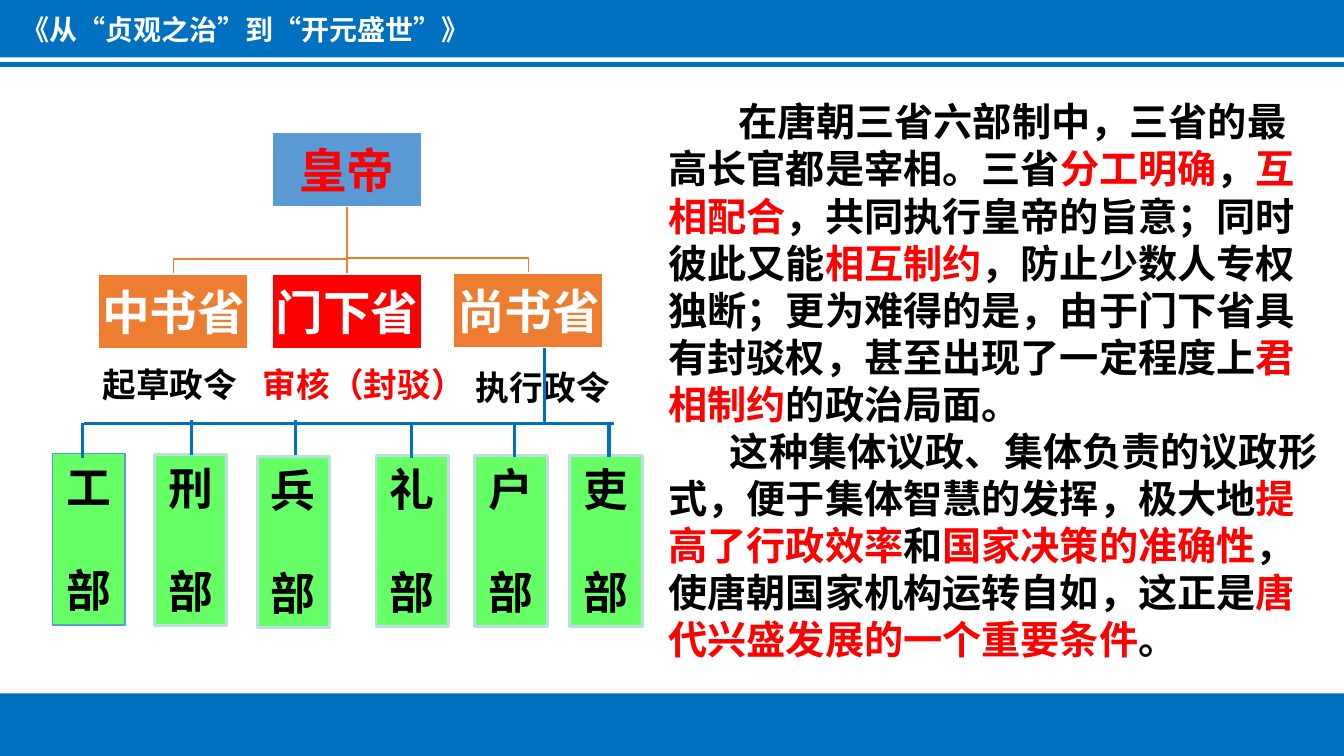
from dataclasses import dataclass

from lxml.etree import SubElement
from pptx import Presentation
from pptx.dml.color import RGBColor
from pptx.enum.shapes import MSO_CONNECTOR, MSO_SHAPE
from pptx.enum.text import MSO_ANCHOR, MSO_AUTO_SIZE, PP_ALIGN
from pptx.oxml.ns import qn
from pptx.util import Inches, Pt

BLUE = RGBColor(0x00, 0x70, 0xC0)
SKY = RGBColor(0x5B, 0x9B, 0xD5)
PALE = RGBColor(0xBB, 0xE0, 0xE3)
ORANGE = RGBColor(0xED, 0x7D, 0x31)
GREEN = RGBColor(0x66, 0xFF, 0x66)
RED = RGBColor(0xFF, 0x00, 0x00)
BLACK = RGBColor(0x00, 0x00, 0x00)
WHITE = RGBColor(0xFF, 0xFF, 0xFF)
CJK_FONT = "Noto Sans CJK SC"


@dataclass
class Office:
    name: str
    left: float
    top: float
    fill: RGBColor
    color: RGBColor = WHITE


@dataclass
class Duty:
    text: str
    left: float
    top: float
    width: float
    color: RGBColor = BLACK


@dataclass
class Ministry:
    name: str
    left: float
    top: float
    stub_x: float
    stub_top: float
    border: RGBColor = PALE
    border_pt: float = 2


OFFICES = [
    Office("皇帝", 2.7, 1.31, SKY, RED),
    Office("中书省", 0.98, 2.72, ORANGE),
    Office("门下省", 2.7, 2.72, RED),
    Office("尚书省", 4.5, 2.71, ORANGE),
]
DUTIES = [
    Duty("起草政令", 0.92, 3.56, 1.54),
    Duty("审核（封驳）", 2.51, 3.56, 2.22, RED),
    Duty("执行政令", 4.62, 3.59, 1.54),
]
MINISTRIES = [
    Ministry("工", 0.52, 4.5, 0.82, 4.2, SKY, 1),
    Ministry("刑", 1.53, 4.51, 1.9, 4.17),
    Ministry("兵", 2.55, 4.53, 2.93, 4.17),
    Ministry("礼", 3.73, 4.52, 4.08, 4.2),
    Ministry("户", 4.71, 4.52, 5.1, 4.19),
    Ministry("吏", 5.65, 4.52, 6.04, 4.19),
]
BRANCHES = [
    [(3.44, 2.05), (3.44, 2.57), (1.72, 2.57), (1.72, 2.72)],
    [(3.44, 2.05), (3.44, 2.56), (5.24, 2.56), (5.24, 2.71)],
    [(3.44, 2.05), (3.44, 2.72)],
]
# Each paragraph: first-line indent and runs, alternating black and red
PARAGRAPHS = [
    (0.69, ["在唐朝三省六部制中，三省的最高长官都是宰相。三省", "分工明确", "，",
            "互相配合", "，共同执行皇帝的旨意；同时彼此又能", "相互制约",
            "，防止少数人专权独断；更为难得的是，由于门下省具有封驳权，甚至出现了一定程度上",
            "君相制约", "的政治局面。"]),
    (0.61, ["这种集体议政、集体负责的议政形式，便于集体智慧的发挥，极大地",
            "提高了行政效率", "和", "国家决策的准确性",
            "，使唐朝国家机构运转自如，这正是", "唐代兴盛发展的一个重要条件", "。"]),
]


def set_attrs(obj, **values) -> None:
    for key, value in values.items():
        setattr(obj, key, value)


def place(sp, left: float, top: float, width: float, height: float) -> None:
    set_attrs(sp, left=Inches(left), top=Inches(top),
              width=Inches(width), height=Inches(height))


def set_frame(tf, wrap: bool, anchor: MSO_ANCHOR, inset: float | None = None) -> None:
    set_attrs(tf, word_wrap=wrap, vertical_anchor=anchor, auto_size=MSO_AUTO_SIZE.NONE)
    if inset is not None:
        sides = ("left", "right", "top", "bottom")
        set_attrs(tf, **{f"margin_{side}": Inches(inset) for side in sides})


def add_run(p, text: str, size: float, color: RGBColor, font: str = "Calibri") -> None:
    r = p.add_run()
    r.text = text
    set_attrs(r.font, name=font, size=Pt(size), bold=True)
    r.font.color.rgb = color
    SubElement(r.font._element, qn("a:ea"), typeface=CJK_FONT)


def add_box(s, at: tuple, fill: RGBColor, border: RGBColor | None = None,
            border_pt: float = 1):
    sp = s.shapes.add_shape(MSO_SHAPE.RECTANGLE, *map(Inches, at))
    sp.shadow.inherit = False
    sp.fill.solid()
    sp.fill.fore_color.rgb = fill
    if border is None:
        sp.line.fill.background()
    else:
        sp.line.color.rgb = border
        sp.line.width = Pt(border_pt)
    return sp


def add_line(s, x1: float, y1: float, x2: float, y2: float) -> None:
    ends = map(Inches, (x1, y1, x2, y2))
    line = s.shapes.add_connector(MSO_CONNECTOR.STRAIGHT, *ends)
    line.line.color.rgb = BLUE
    line.line.width = Pt(2.25)
    SubElement(line._element.spPr, qn("a:effectLst"))


def add_branch(s, points: list) -> None:
    start, *rest = [(Inches(x), Inches(y)) for x, y in points]
    builder = s.shapes.build_freeform(*start)
    builder.add_line_segments(rest, close=False)
    sp = builder.convert_to_shape()
    sp.shadow.inherit = False
    sp.fill.background()
    sp.line.color.rgb = ORANGE
    sp.line.width = Pt(1)


def add_office(s, office: Office) -> None:
    sp = add_box(s, (office.left, office.top, 1.48, 0.74), office.fill, WHITE)
    set_frame(sp.text_frame, True, MSO_ANCHOR.MIDDLE, 0.03)
    p = sp.text_frame.paragraphs[0]
    p.alignment = PP_ALIGN.CENTER
    add_run(p, office.name, 34, office.color)


def add_duty(s, duty: Duty) -> None:
    at = (duty.left, duty.top, duty.width, 0.5)
    tf = s.shapes.add_textbox(*map(Inches, at)).text_frame
    set_frame(tf, False, MSO_ANCHOR.MIDDLE)
    add_run(tf.paragraphs[0], duty.text, 24, duty.color)


def add_ministry(s, ministry: Ministry) -> None:
    sp = add_box(s, (ministry.left, ministry.top, 0.72, 1.7), GREEN,
                 ministry.border, ministry.border_pt)
    tf = sp.text_frame
    set_frame(tf, True, MSO_ANCHOR.MIDDLE)
    for p, text, gap in ((tf.paragraphs[0], ministry.name, 0),
                         (tf.add_paragraph(), "部", 36.8)):
        set_attrs(p, alignment=PP_ALIGN.CENTER, line_spacing=Pt(36.8),
                  space_before=Pt(gap))
        add_run(p, text, 32, BLACK)


def fill_title(title) -> None:
    place(title, 0.11, 0.07, 5.07, 0.44)
    set_frame(title.text_frame, True, MSO_ANCHOR.MIDDLE)
    p = title.text_frame.paragraphs[0]
    p.alignment = PP_ALIGN.LEFT
    add_run(p, "《从“贞观之治”到“开元盛世”》", 20, WHITE, CJK_FONT)


def fill_body(body) -> None:
    place(body, 6.53, 0.92, 6.65, 6.06)
    tf = body.text_frame
    set_frame(tf, True, MSO_ANCHOR.TOP)
    for i, (indent, texts) in enumerate(PARAGRAPHS):
        p = tf.add_paragraph() if i else tf.paragraphs[0]
        set_attrs(p, alignment=PP_ALIGN.LEFT, line_spacing=Pt(33.6), space_before=Pt(0))
        pPr = p._p.get_or_add_pPr()
        pPr.set("marL", "0")
        pPr.set("indent", str(Inches(indent)))
        SubElement(pPr, qn("a:buNone"))
        for j, text in enumerate(texts):
            add_run(p, text, 28, RED if j % 2 else BLACK, CJK_FONT)


def main() -> None:
    prs = Presentation()
    set_attrs(prs, slide_width=Inches(13.33), slide_height=Inches(7.5))
    s = prs.slides.add_slide(prs.slide_layouts[1])
    title, body = s.placeholders

    # Header and footer bands, behind the text
    for top, height in ((0, 0.57), (6.88, 0.62), (0.62, 0.04)):
        band = add_box(s, (0, top, 13.33, height), BLUE, BLUE if top == 0.62 else None)
        title._element.addprevious(band._element)
    fill_title(title)
    fill_body(body)

    # Duties, ministries and the lines that join them
    for duty in DUTIES:
        add_duty(s, duty)
    for ministry in MINISTRIES:
        add_ministry(s, ministry)
        x, y = ministry.stub_x, ministry.stub_top
        add_line(s, x, y, x, y + 0.34)
    add_line(s, 5.4, 3.4, 5.4, 4.19)
    add_line(s, 0.83, 4.2, 6.09, 4.2)

    # Emperor and the three departments
    for points in BRANCHES:
        add_branch(s, points)
    for office in OFFICES:
        add_office(s, office)

    prs.save("out.pptx")


if __name__ == "__main__":
    main()
